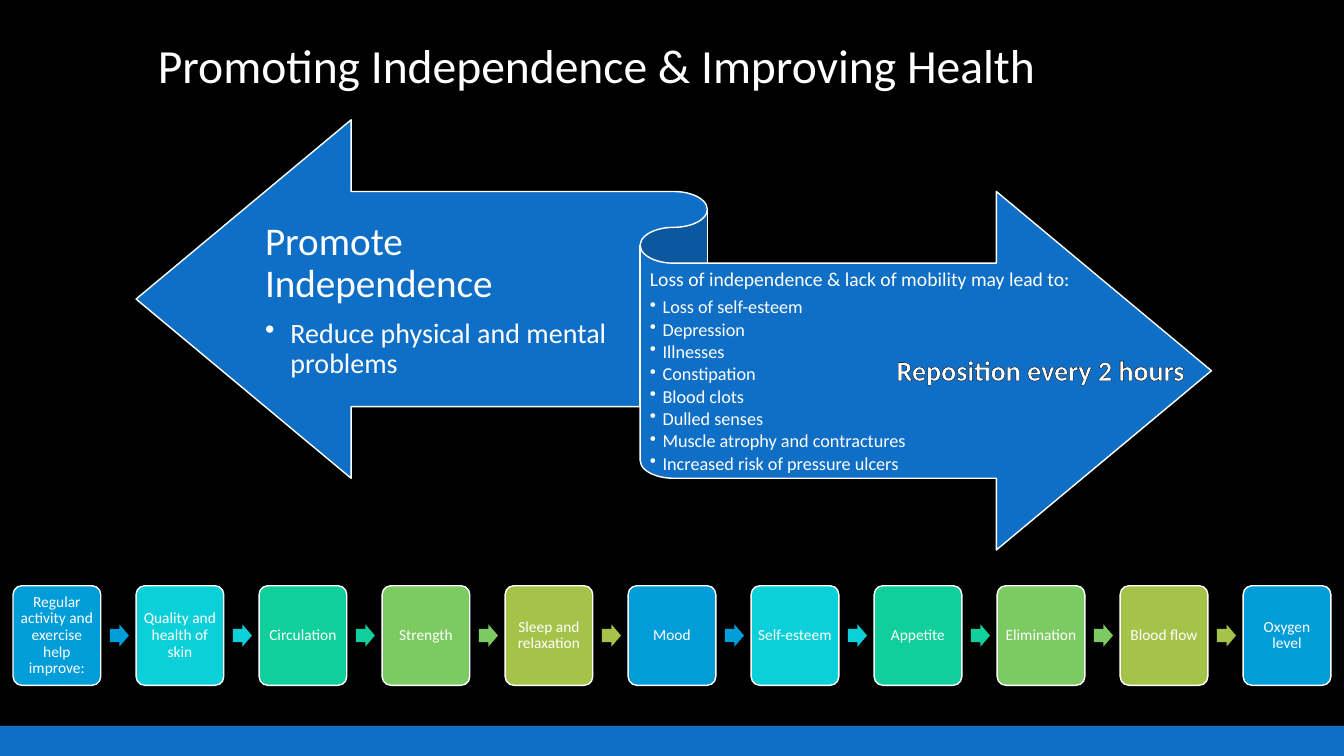
from lxml import etree
from pptx import Presentation, util as u
from pptx.dml.color import RGBColor
from pptx.enum import shapes, text
from pptx.oxml.ns import qn

HEADING = "Promoting Independence & Improving Health"
PROMOTE = ("Promote Independence", ["Reduce physical and mental problems"])
LOSS = ("Loss of independence & lack of mobility may lead to:", [
    "Loss of self-esteem",
    "Depression",
    "Illnesses",
    "Constipation",
    "Blood clots",
    "Dulled senses",
    "Muscle atrophy and contractures",
    "Increased risk of pressure ulcers",
])
REPOSITION = "Reposition every 2 hours"
BENEFITS = [
    "Regular activity and exercise help improve:",
    "Quality and health of skin",
    "Circulation",
    "Strength",
    "Sleep and relaxation",
    "Mood",
    "Self-esteem",
    "Appetite",
    "Elimination",
    "Blood flow",
    "Oxygen level",
]

THEME = {
    "font": "Calibri",
    "ground": "000000",
    "ink": "FFFFFF",
    "main": "0F6FC6",
    "steps": ["009DD9", "0BD0D9", "10CF9B", "7CCA62", "A5C249"],
    "size": {"heading": 34, "promote": 28, "promote_item": 20,
             "loss": 14, "loss_item": 13, "reposition": 20, "step": 11},
}
SIZE = THEME["size"]
WIDTH, HEIGHT = 33.87, 19.05
BAR_HEIGHT = 0.76
STEP_LEFT, STEP_TOP, STEP_WIDTH, STEP_HEIGHT, STEP_PITCH = 0.33, 14.76, 2.21, 2.51, 3.1
ARROW_GAP, ARROW_WIDTH, ARROW_HEIGHT = 0.23, 0.48, 0.56

deck = Presentation()
deck.slide_width, deck.slide_height = u.Cm(WIDTH), u.Cm(HEIGHT)
slide = deck.slides.add_slide(deck.slide_layouts[6])
slide.background.fill.solid()
slide.background.fill.fore_color.rgb = RGBColor.from_string(THEME["ground"])


def apply(target, values):
    for name, value in values.items():
        setattr(target, name, value)


def add_part(kind, box, fill, outlined=False, adjustments=()):
    part = slide.shapes.add_shape(kind, *map(u.Cm, box))
    part.shadow.inherit = False
    part.fill.solid()
    part.fill.fore_color.rgb = RGBColor.from_string(fill)
    if outlined:
        part.line.color.rgb = RGBColor.from_string(THEME["ink"])
        part.line.width = u.Pt(1)
    else:
        part.line.fill.background()
    for index, value in enumerate(adjustments):
        part.adjustments[index] = value
    return part


def set_frame(part, anchor, insets, wrap=True):
    frame = part.text_frame
    sides = ("margin_left", "margin_top", "margin_right", "margin_bottom")
    apply(frame, {"word_wrap": wrap, "vertical_anchor": anchor,
                  **dict(zip(sides, map(u.Cm, insets)))})
    return frame


def write(paragraph, words, size, align=text.PP_ALIGN.LEFT, spacing=0.9, after=0, bold=False):
    apply(paragraph, {"alignment": align, "line_spacing": spacing,
                      "space_after": u.Pt(round(size * after, 1))})
    run = paragraph.add_run()
    run.text = words
    apply(run.font, {"name": THEME["font"], "size": u.Pt(size), "bold": bold})
    run.font.color.rgb = RGBColor.from_string(THEME["ink"])
    return run


def add_bullet(paragraph, indent):
    props = paragraph._p.get_or_add_pPr()
    props.set("marL", str(u.Cm(indent)))
    props.set("indent", str(-u.Cm(indent)))
    etree.SubElement(props, qn("a:buChar")).set("char", "•")


def add_side(content, box, insets, lead_size, item_size, indent):
    lead, items = content
    side = slide.shapes.add_textbox(*map(u.Cm, box))
    frame = set_frame(side, text.MSO_ANCHOR.MIDDLE, insets)
    write(frame.paragraphs[0], lead, lead_size, after=0.35)
    for item in items:
        paragraph = frame.add_paragraph()
        write(paragraph, item, item_size, after=0.15)
        add_bullet(paragraph, indent)


def outline_letters(run, color, width):
    line = etree.Element(qn("a:ln"), w=str(u.Pt(width)))
    fill = etree.SubElement(line, qn("a:solidFill"))
    etree.SubElement(fill, qn("a:srgbClr")).set("val", color)
    run.font._element.insert(0, line)


add_part(shapes.MSO_SHAPE.RECTANGLE, (0, HEIGHT - BAR_HEIGHT, WIDTH, BAR_HEIGHT), THEME["main"])

heading = slide.shapes.add_textbox(*map(u.Cm, (3.73, 0.74, 26.42, 1.75)))
heading_frame = set_frame(heading, text.MSO_ANCHOR.BOTTOM, (0.25, 0.13, 0.25, 0.13))
write(heading_frame.paragraphs[0], HEADING, SIZE["heading"])

add_part(shapes.MSO_SHAPE.LEFT_RIGHT_RIBBON, (3.43, 3.02, 27.1, 10.84), THEME["main"], outlined=True)
add_side(PROMOTE, (6.68, 4.93, 8.94, 5.31), (0, 0.28, 0, 0.3),
         SIZE["promote"], SIZE["promote_item"], 0.64)
add_side(LOSS, (16.38, 6.73, 11.76, 5.31), (0, 0.13, 0, 0.15),
         SIZE["loss"], SIZE["loss_item"], 0.32)

reposition = slide.shapes.add_textbox(*map(u.Cm, (22.3, 8.76, 7.85, 1.11)))
reposition_frame = set_frame(reposition, text.MSO_ANCHOR.TOP, (0.25, 0.13, 0.25, 0.13), wrap=False)
reposition_frame.auto_size = text.MSO_AUTO_SIZE.SHAPE_TO_FIT_TEXT
reposition_words = write(reposition_frame.paragraphs[0], REPOSITION, SIZE["reposition"],
                         text.PP_ALIGN.CENTER, spacing=1.0, bold=True)
outline_letters(reposition_words, THEME["ground"], 0.75)

for index, benefit in enumerate(BENEFITS):
    left = STEP_LEFT + index * STEP_PITCH
    color = THEME["steps"][index % len(THEME["steps"])]
    step = add_part(shapes.MSO_SHAPE.ROUNDED_RECTANGLE, (left, STEP_TOP, STEP_WIDTH, STEP_HEIGHT),
                    color, outlined=True, adjustments=[0.1])
    step_frame = set_frame(step, text.MSO_ANCHOR.MIDDLE, (0.1, 0.13, 0.1, 0.13))
    write(step_frame.paragraphs[0], benefit, SIZE["step"], text.PP_ALIGN.CENTER, after=0.35)
    if index < len(BENEFITS) - 1:
        arrow_top = STEP_TOP + (STEP_HEIGHT - ARROW_HEIGHT) / 2
        add_part(shapes.MSO_SHAPE.RIGHT_ARROW,
                 (left + STEP_WIDTH + ARROW_GAP, arrow_top, ARROW_WIDTH, ARROW_HEIGHT),
                 color, adjustments=[0.6, 0.5])

deck.save("out.pptx")
